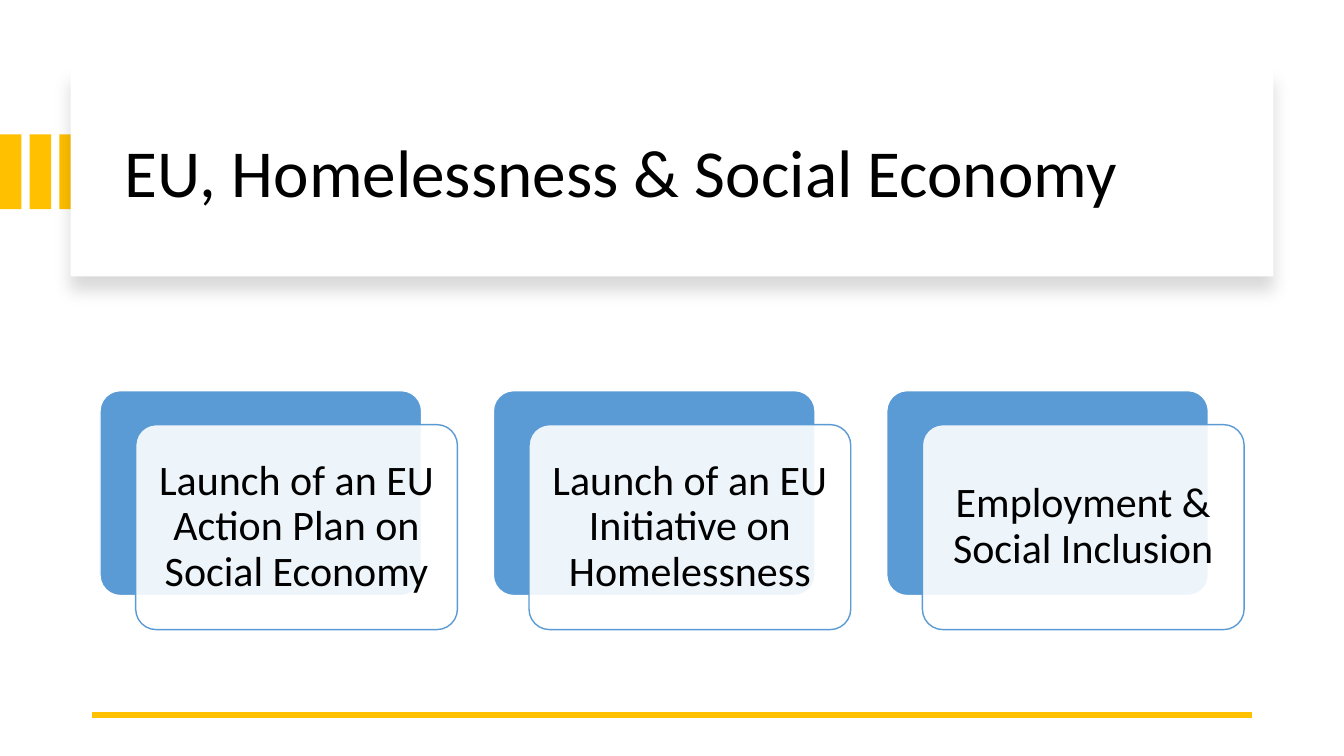
from lxml import etree
from pptx import Presentation
from pptx.dml.color import RGBColor
from pptx.enum.shapes import MSO_CONNECTOR as Connector, MSO_SHAPE as Shape
from pptx.enum.text import MSO_ANCHOR as Anchor, PP_ALIGN as Align
from pptx.oxml import parse_xml
from pptx.oxml.ns import nsdecls, qn
from pptx.util import Inches, Pt

GOLD = RGBColor(0xFF, 0xC0, 0x00)
BLUE = RGBColor(0x5B, 0x9B, 0xD5)
WHITE = RGBColor(0xFF, 0xFF, 0xFF)
BLACK = RGBColor(0x00, 0x00, 0x00)

COLUMNS, ROWS = 160, 90
CARD_TEXTS = [
    "Launch of an EU Action Plan on Social Economy",
    "Launch of an EU Initiative on Homelessness",
    "Employment & Social Inclusion",
]


class SlideBuilder:
    """Places elements on a grid of COLUMNS by ROWS cells."""

    font_name = "Calibri"

    def __init__(self, deck):
        self.page = deck.slides.add_slide(deck.slide_layouts[6])
        self.column = deck.slide_width / COLUMNS
        self.row = deck.slide_height / ROWS

    def place(self, *cells):
        units = (self.column, self.row) * 2
        return [round(cell * unit) for cell, unit in zip(cells, units)]

    def box(self, cells, fill, kind=Shape.RECTANGLE, line=None):
        box = self.page.shapes.add_shape(kind, *self.place(*cells))
        box.shadow.inherit = False
        box.fill.solid()
        box.fill.fore_color.rgb = fill
        if line is None:
            box.line.fill.background()
        else:
            box.line.color.rgb = line
            box.line.width = Pt(1)
        return box

    def panel(self, cells):
        panel = self.box(cells, WHITE)
        effects = panel.element.spPr.find(qn("a:effectLst"))
        effects.append(parse_xml(
            f'<a:outerShdw {nsdecls("a")} blurRad="{Pt(11)}" dist="{Pt(10)}" '
            'dir="5400000" algn="t" rotWithShape="0">'
            f'<a:srgbClr val="{BLACK}"><a:alpha val="15000"/></a:srgbClr>'
            '</a:outerShdw>'))

    def rounded(self, cells, fill, line, opacity=100):
        box = self.box(cells, fill, Shape.ROUNDED_RECTANGLE, line)
        box.adjustments[0] = 0.1
        if opacity < 100:
            color = box.element.spPr.find(qn("a:solidFill"))[0]
            etree.SubElement(color, qn("a:alpha"), val=str(opacity * 1000))

    def text(self, cells, words, size, align=Align.LEFT, inset=None):
        frame = self.page.shapes.add_textbox(*self.place(*cells)).text_frame
        frame.word_wrap = True
        frame.vertical_anchor = Anchor.MIDDLE
        if inset is not None:
            frame.margin_left = frame.margin_right = inset
            frame.margin_top = frame.margin_bottom = inset
        para = frame.paragraphs[0]
        para.text = words
        para.alignment = align
        para.line_spacing = 0.9
        para.font.name = self.font_name
        para.font.size = Pt(size)
        para.font.color.rgb = BLACK

    def rule(self, left, right, top):
        ends = self.place(right, top, left, top)
        line = self.page.shapes.add_connector(Connector.STRAIGHT, *ends)
        line.line.color.rgb = GOLD
        line.line.width = Pt(4.5)
        etree.SubElement(line.element.spPr, qn("a:effectLst"))

    def card(self, left, top, words):
        width, height, pad = 38.3, 24.4, 0.7
        front_left, front_top = left + 4.25, top + 4.05
        self.rounded((left, top, width, height), BLUE, WHITE)
        self.rounded((front_left, front_top, width, height), WHITE, BLUE, 90)
        self.text((front_left + pad, front_top + pad,
                   width - 2 * pad, height - 2 * pad),
                  words, 30, Align.CENTER, Inches(0.12))


def main():
    deck = Presentation()
    deck.slide_width, deck.slide_height = Inches(13.33), Inches(7.5)
    slide = SlideBuilder(deck)

    # Gold bars at the left edge
    for index in range(3):
        slide.box((3.53 * index, 16, 2.55, 8.9), GOLD)

    # Title on a raised panel
    slide.panel((8.4, 8, 143.2, 24.9))
    slide.text((13.7, 10.7, 133.6, 20.4),
               "EU, Homelessness & Social Economy", 48)

    # Rule at the foot
    slide.rule(11, 149, 85.1)

    # Three layered cards
    for index, words in enumerate(CARD_TEXTS):
        slide.card(11.9 + 46.83 * index, 46.5, words)

    deck.save("out.pptx")


if __name__ == "__main__":
    main()
